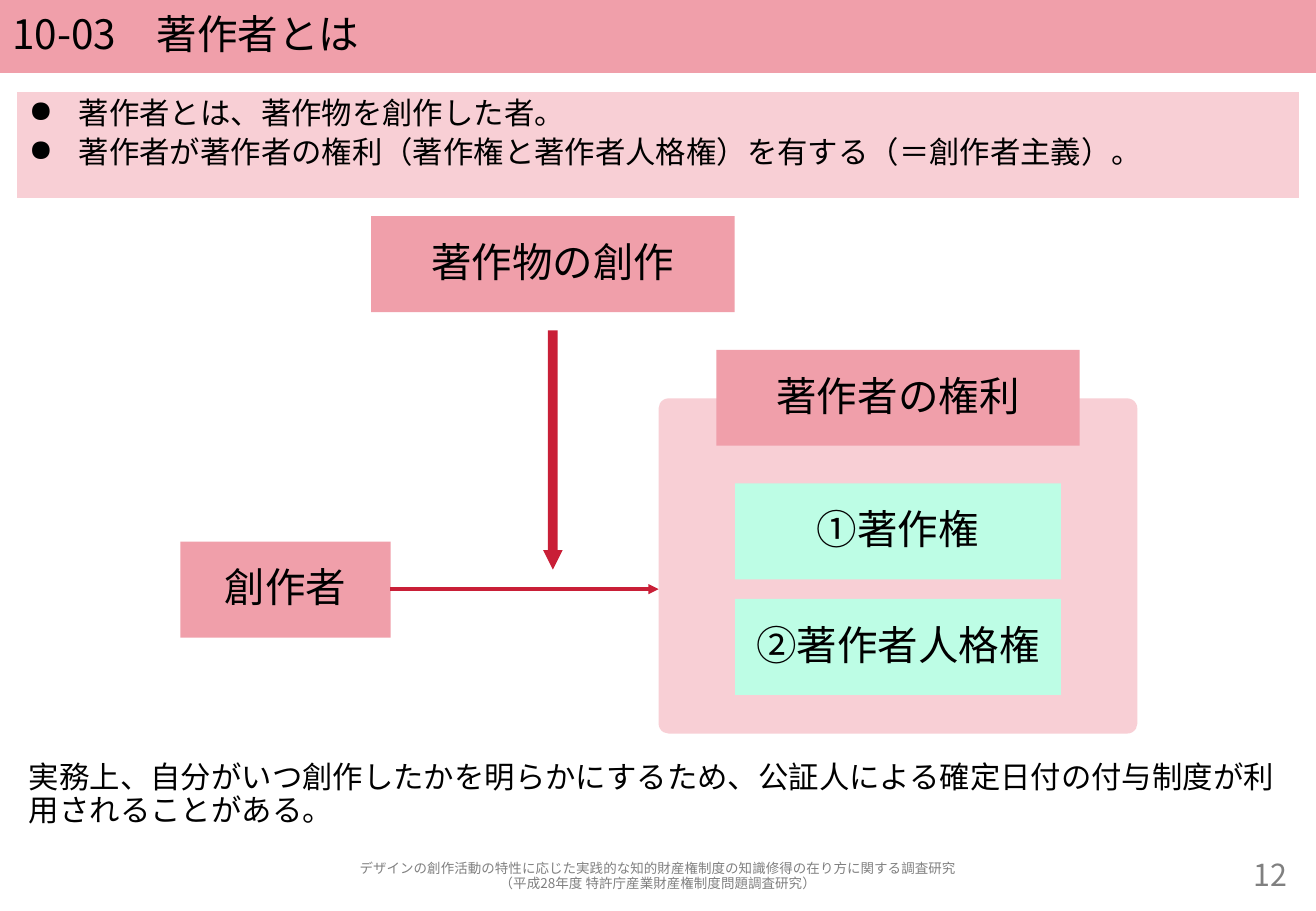
"""Build the slide that explains who counts as the author of a work."""
import dataclasses

import lxml.etree
import pptx
import pptx.dml.color
import pptx.enum.shapes
import pptx.enum.text
import pptx.oxml.ns
import pptx.slide
import pptx.util

Inches = pptx.util.Inches
Pt = pptx.util.Pt
Align = pptx.enum.text.PP_ALIGN
Anchor = pptx.enum.text.MSO_ANCHOR
Shape = pptx.enum.shapes.MSO_SHAPE
qn = pptx.oxml.ns.qn

FONT = "Noto Sans CJK JP"
ROSE, PALE, MINT, RED = "F09FAA", "F8CFD5", "BDFDE5", "C91F37"
BLACK, GRAY = "000000", "808080"
WIDTH, MARGIN = 10.83, 0.14
CONTENT_WIDTH = 10.55
BOX_HEIGHT = 0.79
RIGHTS_CENTER = 7.39


@dataclasses.dataclass
class Box:
    text: str
    center: float
    top: float
    width: float
    fill: str = ROSE


@dataclasses.dataclass
class Note:
    lines: list[str]
    left: float
    top: float
    width: float
    height: float
    size: float = 18
    color: str = BLACK
    align: Align = Align.LEFT
    anchor: Anchor = Anchor.MIDDLE


BOXES = [
    Box("創作者", 2.35, 4.46, 1.73),
    Box("①著作権", RIGHTS_CENTER, 3.98, 2.68, MINT),
    Box("②著作者人格権", RIGHTS_CENTER, 4.93, 2.68, MINT),
    Box("著作者の権利", RIGHTS_CENTER, 2.88, 2.99),
    Box("著作物の創作", 4.55, 1.78, 2.99),
]

NOTES = [
    Note(["実務上、自分がいつ創作したかを明らかにするため、公証人による確定日付の付与制度が利用されることがある。"],
         MARGIN, 6.19, CONTENT_WIDTH, 0.71),
    Note(["デザインの創作活動の特性に応じた実践的な知的財産権制度の知識修得の在り方に関する調査研究",
          "（平成28年度 特許庁産業財産権制度問題調査研究）"],
         MARGIN, 7.06, CONTENT_WIDTH, 0.31, 8, GRAY, Align.CENTER),
    Note(["12"], 9.35, 7.06, 1.34, 0.31, 18, GRAY, Align.RIGHT),
]

SUMMARY = [
    "著作者とは、著作物を創作した者。",
    "著作者が著作者の権利（著作権と著作者人格権）を有する（＝創作者主義）。",
]


def rgb(color: str) -> pptx.dml.color.RGBColor:
    """Turn a hex string into a colour."""
    return pptx.dml.color.RGBColor.from_string(color)


def write(shape, lines: list[str], *, size: float = 24, color: str = BLACK,
          align: Align = Align.CENTER, anchor: Anchor = Anchor.MIDDLE,
          space_before: float = 0, bullet: str = "") -> None:
    """Fill a shape with formatted paragraphs."""
    frame = shape.text_frame
    frame.word_wrap = True
    frame.auto_size = pptx.enum.text.MSO_AUTO_SIZE.NONE
    frame.vertical_anchor = anchor
    frame.text = "\n".join(lines)
    for paragraph in frame.paragraphs:
        paragraph.alignment = align
        paragraph.line_spacing = 0.91
        paragraph.space_before = Pt(space_before)
        if bullet:
            properties = paragraph._p.get_or_add_pPr()
            properties.set("marL", str(Inches(0.41)))
            properties.set("indent", str(-Inches(0.41)))
            lxml.etree.SubElement(properties, qn("a:buChar"), char=bullet)
        for run in paragraph.runs:
            run.font.size = Pt(size)
            run.font.color.rgb = rgb(color)
            run.font.name = FONT
            lxml.etree.SubElement(run._r.get_or_add_rPr(), qn("a:ea"), typeface=FONT)


def place(shape, left: float, top: float, width: float, height: float) -> None:
    """Set the position and size of a shape in inches."""
    shape.left, shape.top = Inches(left), Inches(top)
    shape.width, shape.height = Inches(width), Inches(height)


def add_filled(slide: pptx.slide.Slide, kind: Shape, left: float, top: float,
               width: float, height: float, fill: str):
    """Add a preset shape with a plain fill and no outline."""
    shape = slide.shapes.add_shape(kind, Inches(left), Inches(top), Inches(width), Inches(height))
    shape.shadow.inherit = False
    shape.fill.solid()
    shape.fill.fore_color.rgb = rgb(fill)
    shape.line.fill.background()
    return shape


def add_box(slide: pptx.slide.Slide, box: Box) -> None:
    """Add a labelled box of the diagram."""
    shape = add_filled(slide, Shape.RECTANGLE, box.center - box.width / 2, box.top,
                       box.width, BOX_HEIGHT, box.fill)
    write(shape, [box.text])


def add_note(slide: pptx.slide.Slide, note: Note) -> None:
    """Add a text box below the diagram."""
    shape = slide.shapes.add_textbox(Inches(note.left), Inches(note.top),
                                     Inches(note.width), Inches(note.height))
    write(shape, note.lines, size=note.size, color=note.color,
          align=note.align, anchor=note.anchor)


def add_arrow(slide: pptx.slide.Slide, start: float, end: float, y: float) -> None:
    """Add a horizontal arrow."""
    connector = slide.shapes.add_connector(pptx.enum.shapes.MSO_CONNECTOR.STRAIGHT,
                                           Inches(start), Inches(y), Inches(end), Inches(y))
    connector.line.color.rgb = rgb(RED)
    connector.line.width = Pt(2)
    lxml.etree.SubElement(connector.line._get_or_add_ln(), qn("a:tailEnd"), type="triangle")
    lxml.etree.SubElement(connector._element.spPr, qn("a:effectLst"))


def main() -> None:
    """Build and save the presentation."""
    presentation = pptx.Presentation()
    presentation.slide_width = Inches(WIDTH)
    presentation.slide_height = Inches(7.5)
    slide = presentation.slides.add_slide(presentation.slide_layouts[5])

    title = slide.shapes.title
    place(title, 0, 0, WIDTH, 0.6)
    title.fill.solid()
    title.fill.fore_color.rgb = rgb(ROSE)
    write(title, ["10-03\u3000著作者とは".replace("\u3000", "　")], align=Align.LEFT)

    summary = add_filled(slide, Shape.RECTANGLE, MARGIN, 0.76, CONTENT_WIDTH, 0.87, PALE)
    write(summary, SUMMARY, size=18, align=Align.LEFT, anchor=Anchor.TOP,
          space_before=3.6, bullet="●")

    panel = add_filled(slide, Shape.ROUNDED_RECTANGLE, 5.42, 3.28, 3.94, 2.76, PALE)
    panel.adjustments[0] = 0.03
    for box in BOXES:
        add_box(slide, box)
    creation_arrow = add_filled(slide, Shape.DOWN_ARROW, 4.47, 2.72, 0.16, 1.97, RED)
    creation_arrow.adjustments[1] = 1
    add_arrow(slide, 3.21, 5.42, 4.85)
    for note in NOTES:
        add_note(slide, note)

    presentation.save("out.pptx")


if __name__ == "__main__":
    main()
